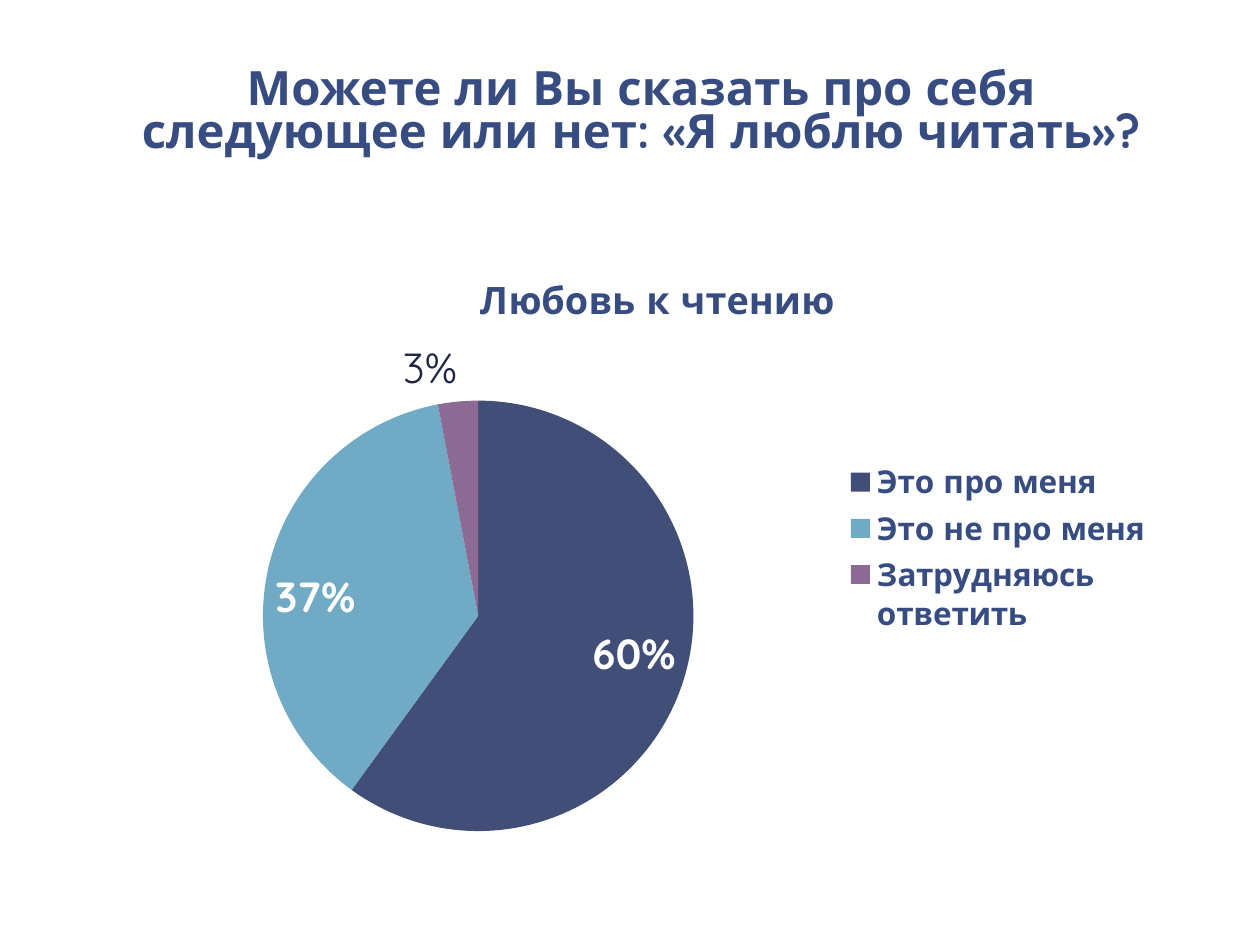
"""Build a slide with a heading and a pie chart on the love of reading."""
import pptx
import pptx.chart.data
import pptx.dml.color
import pptx.enum.chart
import pptx.enum.text
import pptx.oxml
import pptx.util

SCALE = 914400 / 126
INK = "374C81"
NS = 'xmlns:c="http://schemas.openxmlformats.org/drawingml/2006/chart"'


def style(font, size, tint, bold=True):
    """Set the look of a font."""
    look = {"name": "Quicksand", "size": pptx.util.Pt(size), "bold": bold}
    for key, val in look.items():
        setattr(font, key, val)
    font.color.rgb = pptx.dml.color.RGBColor.from_string(tint)


def layout(box, target=""):
    """Make a manual chart layout from fractions of the chart."""
    tags = "".join(f'<c:{key}Mode val="edge"/>' for key in "xy")
    tags += "".join(f'<c:{key} val="{val}"/>' for key, val in zip("xywh", box))
    return pptx.oxml.parse_xml(
        f"<c:layout {NS}><c:manualLayout>{target}{tags}</c:manualLayout></c:layout>")


deck = pptx.Presentation()
deck.slide_width, deck.slide_height = int(1260 * SCALE), int(945 * SCALE)
slide = deck.slides.add_slide(deck.slide_layouts[6])

area = [int(n * SCALE) for n in (116, 10, 1050, 156)]
frame = slide.shapes.add_textbox(*area).text_frame
inset = {"left": 16, "right": 16, "top": 9, "bottom": 9}
for side, gap in inset.items():
    setattr(frame, f"margin_{side}", int(gap * SCALE))
frame.word_wrap = True
frame.vertical_anchor = pptx.enum.text.MSO_ANCHOR.BOTTOM
head = frame.paragraphs[0]
head.text = "Можете ли Вы сказать про себя следующее или нет: «Я люблю читать»?"
head.alignment = pptx.enum.text.PP_ALIGN.CENTER
head.line_spacing = 0.75
style(head.runs[0].font, 27, INK)

data = pptx.chart.data.CategoryChartData()
data.categories = ["Это про меня", "Это не про меня", "Затрудняюсь ответить"]
data.add_series("Любовь к чтению", [60, 37, 3])
area = [int(n * SCALE) for n in (116, 234, 1050, 616)]
kind = pptx.enum.chart.XL_CHART_TYPE.PIE
chart = slide.shapes.add_chart(kind, *area, data).chart
style(chart.font, 18, INK, False)

title = chart.chart_title
title.text_frame.text = "Любовь к чтению"
style(title.text_frame.paragraphs[0].runs[0].font, 21.6, INK)
title.include_in_layout = False

chart.has_legend = True
legend = chart.legend
legend.position = pptx.enum.chart.XL_LEGEND_POSITION.RIGHT
legend.include_in_layout = False
style(legend.font, 18, INK)

plot = chart.plots[0]
plot.vary_by_categories = True
pie = plot.series[0]
for i, tint in enumerate(("414E77", "70AAC4", "8B6A94")):
    fill = pie.points[i].format.fill
    fill.solid()
    fill.fore_color.rgb = pptx.dml.color.RGBColor.from_string(tint)

spots = pptx.enum.chart.XL_LABEL_POSITION
labels = pie.data_labels
look = {"show_percentage": True, "show_value": False, "number_format": "0%",
        "number_format_is_linked": False, "position": spots.INSIDE_END}
for key, val in look.items():
    setattr(labels, key, val)
style(labels.font, 24, "FFFFFF")
small = pie.points[2].data_label
small.text_frame.text = "3%"
style(small.text_frame.paragraphs[0].runs[0].font, 24, "1F2642", False)
small.position = spots.OUTSIDE_END

root = chart.element
inner = '<c:layoutTarget val="inner"/>'
boxes = {"title": ((0.34, 0.05), ""), "legend": ((0.69, 0.36, 0.3, 0.3), ""),
         "plotArea": ((0.14, 0.27, 0.41, 0.7), inner)}
for tag, (box, target) in boxes.items():
    part = root.xpath(f"c:chart/c:{tag}")[0]
    for old in part.xpath("c:layout"):
        part.remove(old)
    prior = {"title": "c:tx", "legend": "c:legendPos"}.get(tag)
    if prior:
        part.xpath(prior)[0].addnext(layout(box, target))
    else:
        part.insert(0, layout(box, target))

deck.save("out.pptx")
